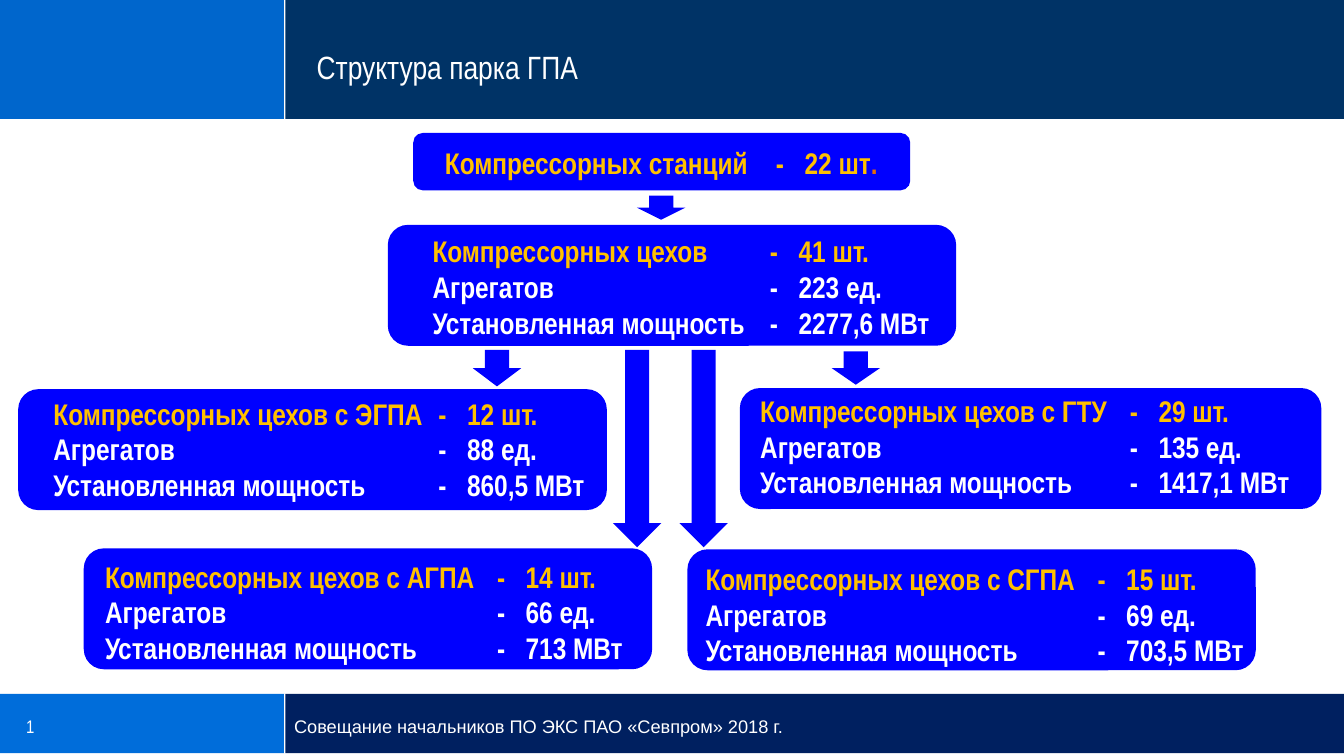
from dataclasses import dataclass

from lxml.etree import SubElement
from pptx import Presentation
from pptx.dml.color import RGBColor
from pptx.enum.shapes import MSO_CONNECTOR, MSO_SHAPE
from pptx.enum.text import MSO_ANCHOR, MSO_AUTO_SIZE, PP_ALIGN
from pptx.oxml.ns import qn
from pptx.util import Pt


@dataclass(frozen=True)
class Theme:
    narrow: str = "Arial Narrow"
    plain: str = "Arial"
    title_size: float = 23
    card_size: float = 21.3
    footer_size: float = 13
    white: str = "FFFFFF"
    card: str = "0000FF"
    accent: str = "FFC000"
    period: str = "E46C0A"
    header_left: str = "0066CC"
    header_right: str = "003366"
    footer_left: str = "006DDA"
    footer_right: str = "002060"


class SlideBuilder:
    def __init__(self, slide, theme):
        self.slide = slide
        self.theme = theme

    def shape(self, kind, left, top, width, height, color):
        shape = self.slide.shapes.add_shape(kind, Pt(left), Pt(top), Pt(width), Pt(height))
        shape.shadow.inherit = False
        shape.fill.solid()
        shape.fill.fore_color.rgb = RGBColor.from_string(color)
        shape.line.fill.background()
        return shape

    def band(self, top, height, left_color, right_color):
        split = 203.2
        self.shape(MSO_SHAPE.RECTANGLE, 0, top, split, height, left_color)
        self.shape(MSO_SHAPE.RECTANGLE, split + 0.6, top, 960 - split - 0.6, height, right_color)
        divider = self.slide.shapes.add_connector(
            MSO_CONNECTOR.STRAIGHT, Pt(split), Pt(top), Pt(split), Pt(top + height))
        divider.line.color.rgb = RGBColor.from_string(self.theme.white)
        divider.line.width = Pt(1.25)
        SubElement(divider.element.spPr, qn("a:effectLst"))

    def style(self, font, name, size, color, bold=False):
        font.name = name
        font.size = Pt(size)
        font.bold = bold
        font.color.rgb = RGBColor.from_string(color)

    def frame(self, shape, anchor, insets):
        frame = shape.text_frame
        frame.word_wrap = True
        frame.auto_size = MSO_AUTO_SIZE.NONE
        frame.vertical_anchor = anchor
        (frame.margin_left, frame.margin_top,
         frame.margin_right, frame.margin_bottom) = map(Pt, insets)
        return frame

    def text_box(self, left, top, width, height, anchor, insets):
        box = self.slide.shapes.add_textbox(Pt(left), Pt(top), Pt(width), Pt(height))
        return self.frame(box, anchor, insets)

    def title(self, text):
        title = self.slide.shapes.title
        title.left, title.top, title.width, title.height = Pt(219), Pt(28), Pt(740), Pt(37)
        frame = self.frame(title, MSO_ANCHOR.BOTTOM, (7.2, 3.6, 7.2, 3.6))
        frame.text = text
        frame.paragraphs[0].alignment = PP_ALIGN.LEFT
        self.style(frame.paragraphs[0].runs[0].font,
                   self.theme.narrow, self.theme.title_size, self.theme.white)
        # Bring the title in front of the header band
        title.element.getparent().append(title.element)

    def footer_text(self, text, left, width, font_name):
        frame = self.text_box(left, 507.2, width, 25, MSO_ANCHOR.TOP, (7.2, 3.6, 7.2, 3.6))
        frame.text = text
        self.style(frame.paragraphs[0].runs[0].font,
                   font_name, self.theme.footer_size, self.theme.white)

    def row(self, paragraph, label, value, dash_at, color):
        paragraph.text = f"{label}\t-\t{value}"
        paragraph.alignment = PP_ALIGN.LEFT
        tabs = SubElement(paragraph._p.get_or_add_pPr(), qn("a:tabLst"))
        for position in (dash_at, dash_at + 20.5):
            SubElement(tabs, qn("a:tab"), pos=str(Pt(position)), algn="l")
        self.style(paragraph.runs[0].font, self.theme.narrow, self.theme.card_size, color, True)

    def card(self, left, top, width, height, text_left, text_bottom, dash_at, rows):
        self.shape(MSO_SHAPE.ROUNDED_RECTANGLE, left, top, width, height, self.theme.card)
        frame = self.text_box(text_left, text_bottom - height, left + width - text_left,
                              height, MSO_ANCHOR.BOTTOM, (8, 4, 0, 4))
        for index, (label, value) in enumerate(rows):
            paragraph = frame.add_paragraph() if index else frame.paragraphs[0]
            color = self.theme.white if index else self.theme.accent
            self.row(paragraph, label, value, dash_at, color)
        return frame

    def arrow(self, left, top, height):
        self.shape(MSO_SHAPE.DOWN_ARROW, left, top, 34.6, height, self.theme.card)


def main():
    presentation = Presentation()
    presentation.slide_width, presentation.slide_height = Pt(960), Pt(540)
    slide = presentation.slides.add_slide(presentation.slide_layouts[5])
    theme = Theme()
    builder = SlideBuilder(slide, theme)

    # Footer and header
    builder.band(495.6, 42.4, theme.footer_left, theme.footer_right)
    builder.band(0, 85, theme.header_left, theme.header_right)
    builder.footer_text("1", 11.5, 190, theme.narrow)
    builder.footer_text("Совещание начальников ПО ЭКС ПАО «Севпром» 2018 г.", 203, 714, theme.plain)
    builder.title("Структура парка ГПА")

    # Stations
    stations = builder.card(295.2, 95, 355, 41, 309.8, 133, 236.5,
                            [("Компрессорных станций", "22 шт")])
    period = stations.paragraphs[0].add_run()
    period.text = "."
    builder.style(period.font, theme.narrow, theme.card_size, theme.period, True)

    # Workshops: left, top, width, text left, text bottom, dash, name, three values
    workshops = [
        (277, 160.6, 406, 301, 247, 241, "", "41 шт.", "223 ед.", "2277,6 МВт"),
        (13, 278, 420.5, 30.2, 363, 275, " с ЭГПА", "12 шт.", "88 ед.", "860,5 МВт"),
        (528.5, 277.2, 415.4, 535, 361, 264, " с ГТУ", "29 шт.", "135 ед.", "1417,1 МВт"),
        (59.8, 391.7, 406, 67, 479.5, 280, " с АГПА", "14 шт.", "66 ед.", "713 МВт"),
        (491, 392.4, 406, 496, 481, 280, " с СГПА", "15 шт.", "69 ед.", "703,5 МВт"),
    ]
    for left, top, width, text_left, text_bottom, dash_at, name, *values in workshops:
        labels = ("Компрессорных цехов" + name, "Агрегатов", "Установленная мощность")
        builder.card(left, top, width, 86.4, text_left, text_bottom, dash_at,
                     zip(labels, values))

    # Arrows between levels
    for left, top, height in [(455, 139.7, 17.3), (337.7, 250, 26), (594, 251, 23.8),
                              (437.8, 250, 141), (485.3, 250, 141)]:
        builder.arrow(left, top, height)

    presentation.save("out.pptx")


if __name__ == "__main__":
    main()
